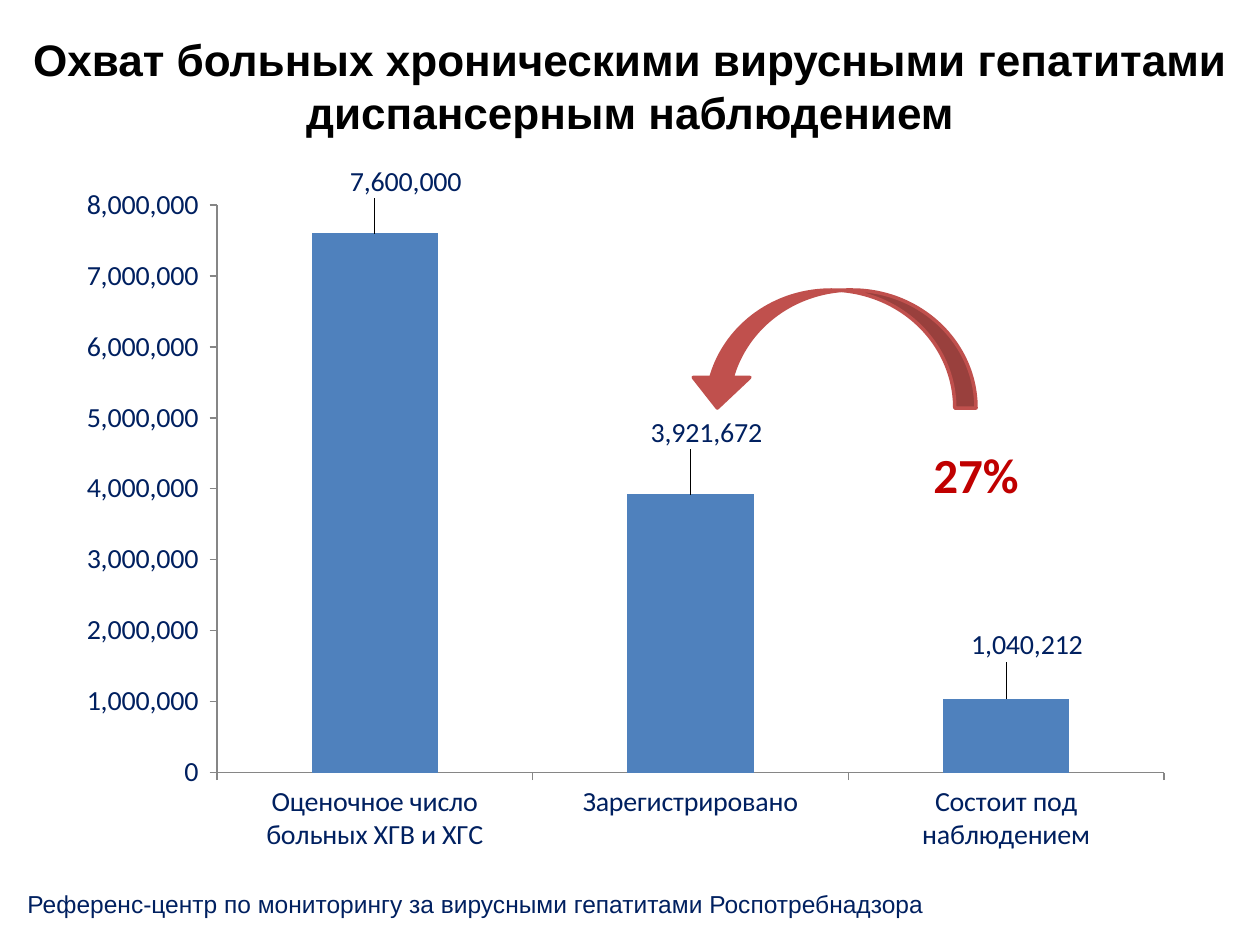
from dataclasses import dataclass

from pptx import Presentation
from pptx.chart.data import CategoryChartData
from pptx.dml.color import RGBColor
from pptx.enum.chart import XL_CHART_TYPE as ChartType
from pptx.enum.chart import XL_LABEL_POSITION as LabelPosition
from pptx.enum.chart import XL_TICK_MARK as TickMark
from pptx.enum.shapes import MSO_SHAPE as Shape
from pptx.enum.text import MSO_ANCHOR as Anchor
from pptx.enum.text import PP_ALIGN as Align
from pptx.oxml import parse_xml
from pptx.oxml.ns import nsdecls
from pptx.util import Emu, Pt

TITLE = "Охват больных хроническими вирусными гепатитами диспансерным наблюдением"
SHARE = "27%"
FOOTER = "Референс-центр по мониторингу за вирусными гепатитами Роспотребнадзора"
COVERAGE = [
    ("Оценочное число больных ХГВ и ХГС", 7600000),
    ("Зарегистрировано", 3921672),
    ("Состоит под наблюдением", 1040212),
]
LABEL_SHIFTS = [(31, -30), (16, -40), (21, -32)]

PAGE_SIZE = (1260, 945)
TITLE_AREA = (0, 45, 1260, 81)
CHART_AREA = (64, 165, 1123, 702)
PLOT_AREA = (217, 199, 947, 573)
ARROW_AREA = (689, 290, 287, 118)
SHARE_AREA = (921, 438, 111, 72)
FOOTER_AREA = (15, 883, 1080, 43)


@dataclass(frozen=True)
class Theme:
    ink: RGBColor = RGBColor(0, 0, 0)
    navy: RGBColor = RGBColor(0x00, 0x20, 0x60)
    column: RGBColor = RGBColor(0x4F, 0x81, 0xBD)
    arrow: RGBColor = RGBColor(0xC0, 0x50, 0x4D)
    accent: RGBColor = RGBColor(0xC0, 0x00, 0x00)
    axis: RGBColor = RGBColor(0x86, 0x86, 0x86)
    heading_font: str = "Arial"
    chart_font: str = "Calibri"
    title_size: float = 25.2
    share_size: int = 28
    chart_size: int = 16
    footer_size: int = 14


THEME = Theme()


def px(value):
    return Emu(round(value * 914400 / 126))


def place(area):
    return [px(value) for value in area]


def style_font(font, name, size, color, bold=False):
    font.name = name
    font.size = Pt(size)
    font.bold = bold
    font.color.rgb = color


def add_text(page, area, text, name, size, color, bold=False, align=Align.LEFT,
             anchor=Anchor.TOP, wrap=True):
    frame = page.shapes.add_textbox(*place(area)).text_frame
    frame.word_wrap = wrap
    frame.vertical_anchor = anchor
    para = frame.paragraphs[0]
    para.alignment = align
    span = para.add_run()
    span.text = text
    style_font(span.font, name, size, color, bold)


def manual_layout(fields):
    parts = "".join(f'<c:{key} val="{value}"/>' for key, value in fields)
    return parse_xml(
        f'<c:layout {nsdecls("c")}><c:manualLayout>{parts}</c:manualLayout></c:layout>'
    )


def fix_plot_area(chart):
    left, top, width, height = CHART_AREA
    plot_left, plot_top, plot_width, plot_height = PLOT_AREA
    layout = manual_layout([
        ("layoutTarget", "inner"), ("xMode", "edge"), ("yMode", "edge"),
        ("x", (plot_left - left) / width), ("y", (plot_top - top) / height),
        ("w", plot_width / width), ("h", plot_height / height),
    ])
    area = chart.element.xpath("c:chart/c:plotArea")[0]
    for old in area.xpath("c:layout"):
        area.remove(old)
    area.insert(0, layout)


def label_columns(chart, series):
    number_format = "#,##0;[Red]#,##0"
    labels = series.data_labels
    labels.show_value = True
    labels.number_format = number_format
    labels.number_format_is_linked = False
    labels.position = LabelPosition.OUTSIDE_END
    style_font(labels.font, THEME.chart_font, THEME.chart_size, THEME.navy)
    for index in range(len(COVERAGE)):
        label = series.points[index].data_label
        style_font(label.font, THEME.chart_font, THEME.chart_size, THEME.navy)
        label.position = LabelPosition.OUTSIDE_END
    width, height = CHART_AREA[2:]
    for node, (right, down) in zip(chart.element.xpath(".//c:dLbl"), LABEL_SHIFTS):
        node.insert(1, manual_layout([("x", right / width), ("y", down / height)]))
        node.insert(2, parse_xml(
            f'<c:numFmt {nsdecls("c")} formatCode="{number_format}" sourceLinked="0"/>'
        ))


def add_coverage_chart(page):
    data = CategoryChartData()
    data.categories = [name for name, count in COVERAGE]
    data.add_series("Series 1", [count for name, count in COVERAGE])
    chart = page.shapes.add_chart(
        ChartType.COLUMN_CLUSTERED, *place(CHART_AREA), data).chart
    chart.has_legend = False
    chart.has_title = False
    style_font(chart.font, THEME.chart_font, THEME.chart_size, THEME.navy)
    for axis in (chart.category_axis, chart.value_axis):
        axis.has_major_gridlines = False
        axis.major_tick_mark = TickMark.OUTSIDE
        axis.minor_tick_mark = TickMark.NONE
        axis.format.line.color.rgb = THEME.axis
    scale = chart.value_axis
    scale.minimum_scale, scale.maximum_scale = 0, 8000000
    scale.major_unit = 1000000
    scale.tick_labels.number_format = "#,##0_ ;\\-#,##0\\ "
    scale.tick_labels.number_format_is_linked = False
    plot = chart.plots[0]
    plot.gap_width = 150
    plot.vary_by_categories = False
    series = plot.series[0]
    series.format.fill.solid()
    series.format.fill.fore_color.rgb = THEME.column
    label_columns(chart, series)
    fix_plot_area(chart)


def add_arrow(page):
    arrow = page.shapes.add_shape(Shape.CURVED_UP_ARROW, *place(ARROW_AREA))
    arrow.rotation = 180
    arrow.shadow.inherit = False
    for index, value in enumerate((0.18, 0.48, 0.26)):
        arrow.adjustments[index] = value
    arrow.fill.solid()
    arrow.fill.fore_color.rgb = THEME.arrow
    arrow.line.color.rgb = THEME.arrow
    arrow.line.width = Pt(2)


def main():
    deck = Presentation()
    deck.slide_width, deck.slide_height = place(PAGE_SIZE)
    page = deck.slides.add_slide(deck.slide_layouts[6])
    add_text(page, TITLE_AREA, TITLE, THEME.heading_font, THEME.title_size, THEME.ink,
             bold=True, align=Align.CENTER, anchor=Anchor.MIDDLE)
    add_coverage_chart(page)
    add_arrow(page)
    add_text(page, SHARE_AREA, SHARE, THEME.chart_font, THEME.share_size, THEME.accent,
             bold=True, wrap=False)
    add_text(page, FOOTER_AREA, FOOTER, THEME.heading_font, THEME.footer_size, THEME.navy)
    deck.save("out.pptx")


if __name__ == "__main__":
    main()
